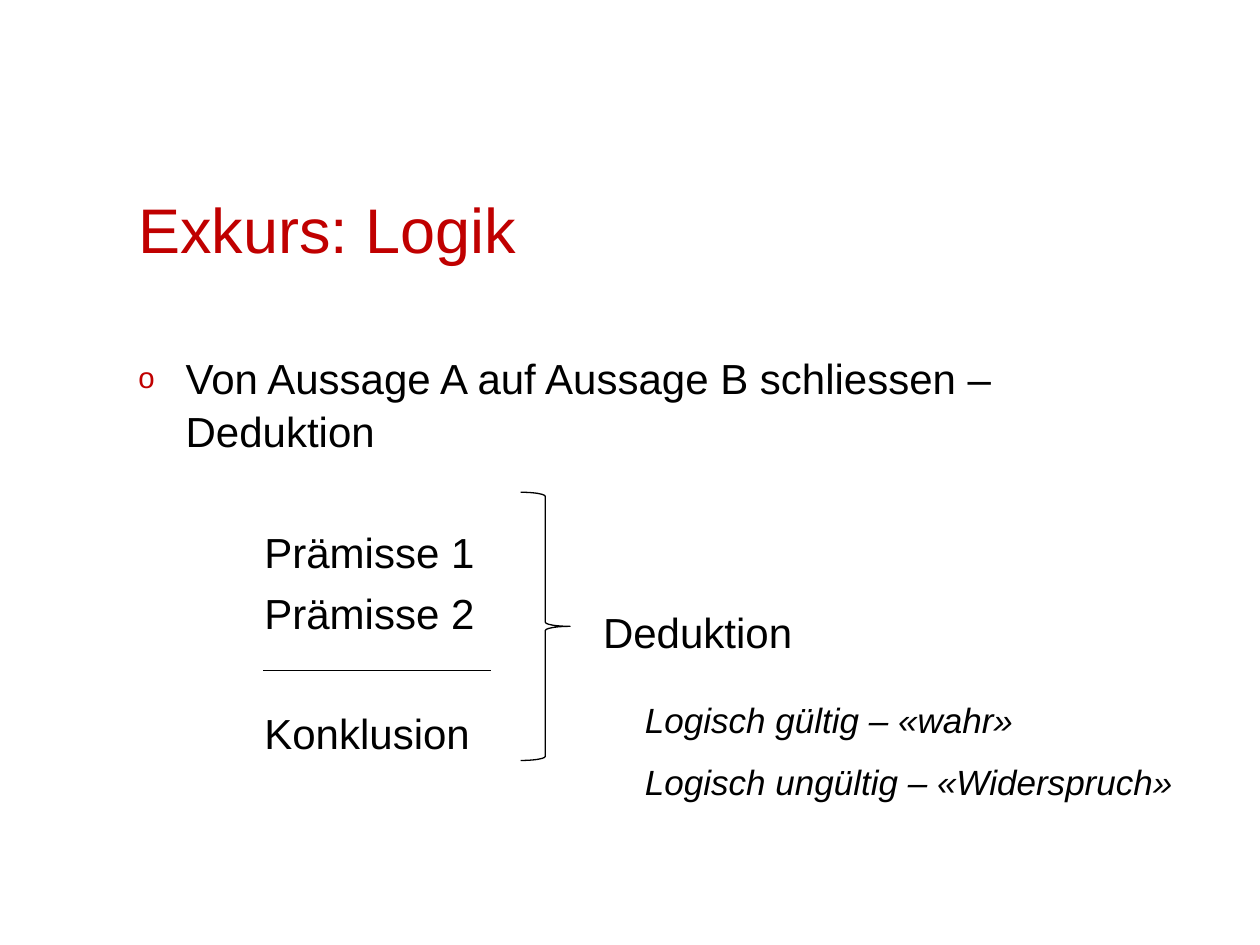
import pptx
import pptx.util
import pptx.dml.color
import pptx.enum.shapes
import pptx.enum.text
import pptx.oxml
import pptx.oxml.ns
import lxml.etree

Pt = pptx.util.Pt
RED = pptx.dml.color.RGBColor(0xC0, 0x00, 0x00)
BLACK = pptx.dml.color.RGBColor(0x00, 0x00, 0x00)
FONT = "Arial"
LINE_SPACING = 1.05
PARA_GAP = 4.8
EMPTY_LINE_GAP = 38.6


def style_font(para, size, color, italic=False):
    """Format every run of a paragraph."""
    for span in para.runs:
        span.font.name = FONT
        span.font.size = Pt(size)
        span.font.color.rgb = color
        span.font.italic = italic


def add_text(page, left, top, width, height, text, size, color=BLACK, italic=False):
    """Add a wrapping text box and return its text frame."""
    box = page.shapes.add_textbox(Pt(left), Pt(top), Pt(width), Pt(height))
    frame = box.text_frame
    frame.word_wrap = True
    frame.text = text
    for para in frame.paragraphs:
        style_font(para, size, color, italic)
    return frame


def set_indent(para, left, first=0):
    """Set the left margin and first-line indent of a paragraph."""
    properties = para._p.get_or_add_pPr()
    properties.set("marL", str(Pt(left)))
    properties.set("indent", str(Pt(first)))
    return properties


def add_bullet(para):
    """Give a paragraph a small red hanging bullet."""
    properties = set_indent(para, 27, -27)
    color = lxml.etree.SubElement(properties, pptx.oxml.ns.qn("a:buClr"))
    lxml.etree.SubElement(color, pptx.oxml.ns.qn("a:srgbClr"), val=str(RED))
    lxml.etree.SubElement(properties, pptx.oxml.ns.qn("a:buSzPct"), val="70000")
    lxml.etree.SubElement(properties, pptx.oxml.ns.qn("a:buFont"), typeface=FONT)
    lxml.etree.SubElement(properties, pptx.oxml.ns.qn("a:buChar"), char="o")


def add_title(page, left, top, width, height):
    """Add the bottom-anchored slide title."""
    frame = add_text(page, left, top, width, height, "Exkurs: Logik", 36, RED)
    frame.vertical_anchor = pptx.enum.text.MSO_ANCHOR.BOTTOM


def add_argument(page, left, top, width, height):
    """Add the bullet, the premises, the rule and the conclusion."""
    lines = ["Von Aussage A auf Aussage B schliessen – Deduktion",
             "Prämisse 1", "Prämisse 2", "Konklusion"]
    frame = add_text(page, left, top, width, height, "\n".join(lines), 24)
    gaps = [0, EMPTY_LINE_GAP, PARA_GAP, EMPTY_LINE_GAP]
    for para, gap in zip(frame.paragraphs, gaps):
        para.line_spacing = LINE_SPACING
        para.space_before = Pt(gap)
    add_bullet(frame.paragraphs[0])
    for para in frame.paragraphs[1:]:
        set_indent(para, 72)

    rule_left, rule_top = left + 78.5, top + 186.5
    rule = page.shapes.add_connector(
        pptx.enum.shapes.MSO_CONNECTOR.STRAIGHT,
        Pt(rule_left), Pt(rule_top), Pt(rule_left + 130), Pt(rule_top))
    rule.line.color.rgb = BLACK
    rule.line.width = Pt(0.75)
    lxml.etree.SubElement(rule._element.spPr, pptx.oxml.ns.qn("a:effectLst"))


def add_deduction(page, left, top, width, height):
    """Add the brace with its label and the two possible verdicts."""
    brace = page.shapes.add_shape(
        pptx.enum.shapes.MSO_SHAPE.RIGHT_BRACE,
        Pt(left), Pt(top), Pt(width), Pt(height))
    brace.shadow.inherit = False
    brace.fill.background()
    brace.line.color.rgb = BLACK
    brace.line.width = Pt(0.75)

    add_text(page, left + 40, top + 62, 264, 36, "Deduktion", 24)
    verdicts = ["Logisch gültig – «wahr»", "Logisch ungültig – «Widerspruch»"]
    for row, verdict in enumerate(verdicts):
        add_text(page, left + 64, top + 114.5 + row * 35.3, 333, 31.5,
                 verdict, 20, italic=True)


def main():
    """Build the slide and save the deck."""
    deck = pptx.Presentation()
    deck.slide_width, deck.slide_height = Pt(720), Pt(540)
    page = deck.slides.add_slide(deck.slide_layouts[6])
    add_title(page, 72, 65.5, 576, 90)
    add_argument(page, 72, 196.6, 576, 288.7)
    add_deduction(page, 297.5, 281.3, 28.3, 153.3)
    deck.save("out.pptx")


if __name__ == "__main__":
    main()
